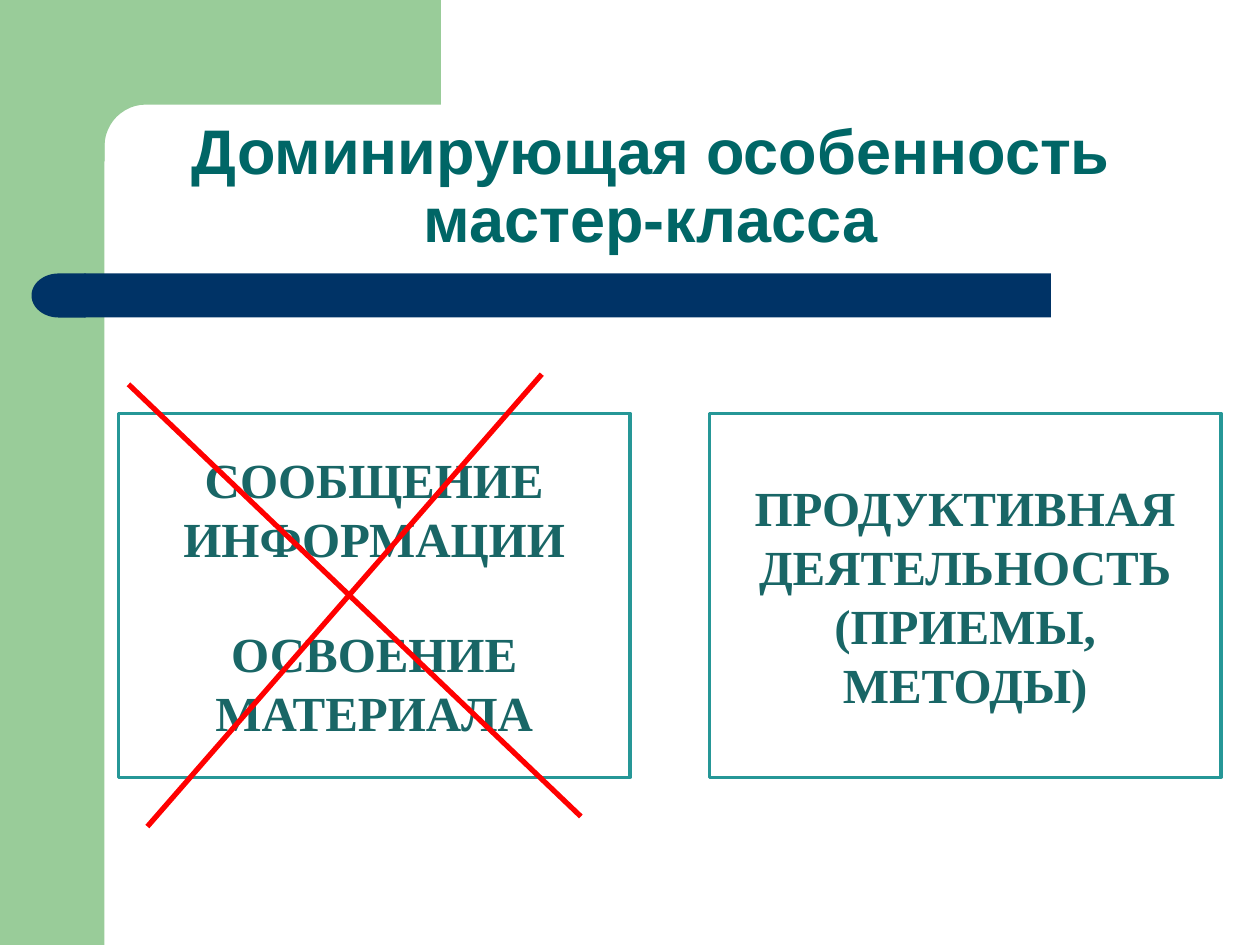
from dataclasses import dataclass
from math import cos, pi, sin

from lxml.etree import SubElement
from pptx import Presentation
from pptx.dml.color import RGBColor
from pptx.enum.shapes import MSO_CONNECTOR, MSO_SHAPE
from pptx.enum.text import MSO_ANCHOR, MSO_AUTO_SIZE, PP_ALIGN
from pptx.oxml.ns import qn
from pptx.util import Inches, Pt


@dataclass(frozen=True)
class Theme:
    green: RGBColor = RGBColor(0x99, 0xCC, 0x99)
    navy: RGBColor = RGBColor(0x00, 0x33, 0x66)
    title: RGBColor = RGBColor(0x00, 0x66, 0x66)
    text: RGBColor = RGBColor(0x19, 0x66, 0x66)
    border: RGBColor = RGBColor(0x26, 0x97, 0x97)
    cross: RGBColor = RGBColor(0xFF, 0x00, 0x00)
    title_font: str = "Arial"
    body_font: str = "Times New Roman"
    title_size: Pt = Pt(36)
    body_size: Pt = Pt(28)
    paragraph_gap: Pt = Pt(32)


THEME = Theme()


def paint(sp, color):
    sp.shadow.inherit = False
    sp.fill.solid()
    sp.fill.fore_color.rgb = color
    sp.line.fill.background()


def add_block(s, kind, box, color):
    sp = s.shapes.add_shape(kind, *map(Inches, box))
    paint(sp, color)
    return sp


def add_corner(s):
    side, top, radius, steps = 0.83, 0.83, 0.33, 12
    angles = [pi / 2 * (1 + i / steps) for i in range(steps + 1)]
    arc = [(side + radius * (1 + cos(a)), top + radius * (1 - sin(a))) for a in angles]
    points = [(3.5, 0), (3.5, top), *arc, (side, 1.28), (0.5, 1.28), (0.5, 0)]
    points = [(Inches(x), Inches(y)) for x, y in points]
    builder = s.shapes.build_freeform(*points[0])
    builder.add_line_segments(points[1:], close=True)
    paint(builder.convert_to_shape(), THEME.green)


def style_paragraph(p, font, size, color):
    p.alignment = PP_ALIGN.CENTER
    p.font.name = font
    p.font.size = size
    p.font.bold = True
    p.font.color.rgb = color


def set_title(s, text):
    sp = s.shapes.title
    sp.left, sp.top, sp.width, sp.height = map(Inches, (0.83, 0.83, 8.67, 1.25))
    tf = sp.text_frame
    tf.text = text
    tf.word_wrap = True
    tf.auto_size = MSO_AUTO_SIZE.NONE
    tf.vertical_anchor = MSO_ANCHOR.BOTTOM
    p = tf.paragraphs[0]
    p.line_spacing = 0.9
    style_paragraph(p, THEME.title_font, THEME.title_size, THEME.title)


def add_card(s, left, lines, gap=Pt(0)):
    sp = s.shapes.add_shape(MSO_SHAPE.RECTANGLE, *map(Inches, (left, 3.28, 4.06, 2.89)))
    sp.shadow.inherit = False
    sp.fill.background()
    sp.line.color.rgb = THEME.border
    sp.line.width = Pt(2)
    tf = sp.text_frame
    tf.word_wrap = True
    tf.vertical_anchor = MSO_ANCHOR.MIDDLE
    tf.text = "\n".join(lines)
    for p in tf.paragraphs:
        style_paragraph(p, THEME.body_font, THEME.body_size, THEME.text)
    for p in tf.paragraphs[1:]:
        p.space_before = gap


def add_stroke(s, start, end):
    line = s.shapes.add_connector(MSO_CONNECTOR.STRAIGHT, *map(Inches, (*start, *end)))
    line.line.color.rgb = THEME.cross
    line.line.width = Pt(3)
    SubElement(line._element.spPr, qn("a:effectLst"))


def main():
    prs = Presentation()
    prs.slide_width, prs.slide_height = Inches(10), Inches(7.5)
    s = prs.slides.add_slide(prs.slide_layouts[5])

    add_block(s, MSO_SHAPE.RECTANGLE, (0, 0, 0.83, 7.5), THEME.green)
    add_corner(s)
    add_block(s, MSO_SHAPE.RECTANGLE, (0.67, 2.17, 7.67, 0.35), THEME.navy)
    cap = add_block(s, MSO_SHAPE.FLOWCHART_DELAY, (0.25, 2.17, 0.43, 0.35), THEME.navy)
    cap.rotation = 180

    set_title(s, "Доминирующая особенность мастер-класса")
    add_card(s, 0.94, ["СООБЩЕНИЕ ИНФОРМАЦИИ", "ОСВОЕНИЕ МАТЕРИАЛА"], THEME.paragraph_gap)
    add_card(s, 5.63, ["ПРОДУКТИВНАЯ ДЕЯТЕЛЬНОСТЬ", "(ПРИЕМЫ, МЕТОДЫ)"])
    add_stroke(s, (1.02, 3.05), (4.61, 6.48))
    add_stroke(s, (4.3, 2.97), (1.17, 6.56))

    prs.save("out.pptx")


if __name__ == "__main__":
    main()
